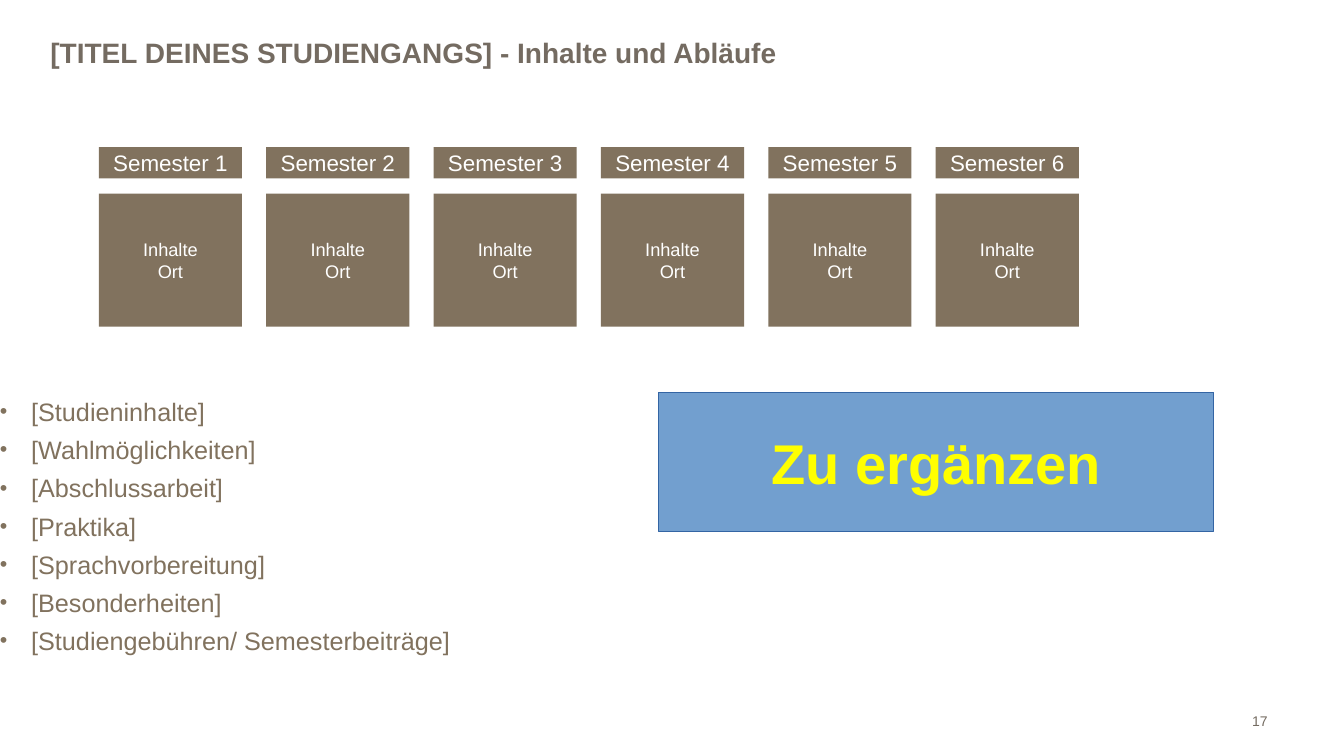
from lxml.etree import SubElement
from pptx import Presentation
from pptx.dml.color import RGBColor
from pptx.enum.shapes import MSO_SHAPE
from pptx.enum.text import MSO_ANCHOR, MSO_AUTO_SIZE, PP_ALIGN
from pptx.oxml.ns import qn
from pptx.util import Pt

PX = 9144
BROWN = RGBColor(0x81, 0x72, 0x5E)
GREY = RGBColor(0x74, 0x6B, 0x61)
WHITE = RGBColor(0xFF, 0xFF, 0xFF)
BLUE = RGBColor(0x72, 0x9F, 0xCF)
NAVY = RGBColor(0x34, 0x65, 0xA4)
YELLOW = RGBColor(0xFF, 0xFF, 0x00)


def write(frame, lines, size, color, align=PP_ALIGN.LEFT, bold=False):
    frame.word_wrap = True
    for i, line in enumerate(lines):
        para = frame.add_paragraph() if i else frame.paragraphs[0]
        para.alignment = align
        run = para.add_run()
        run.text = line
        run.font.name = "Arial"
        run.font.size = Pt(size)
        run.font.bold = bold
        run.font.color.rgb = color


def block(shapes, left, top, width, height, fill):
    rect = shapes.add_shape(
        MSO_SHAPE.RECTANGLE, left * PX, top * PX, width * PX, height * PX
    )
    rect.shadow.inherit = False
    rect.fill.solid()
    rect.fill.fore_color.rgb = fill
    rect.line.fill.background()
    rect.text_frame.vertical_anchor = MSO_ANCHOR.MIDDLE
    return rect


deck = Presentation()
deck.slide_width = 1333 * PX
deck.slide_height = 750 * PX
slide = deck.slides.add_slide(deck.slide_layouts[6])
shapes = slide.shapes

topics = shapes.add_textbox(0, 394 * PX, 1233 * PX, 267 * PX).text_frame
topics.margin_left = topics.margin_right = 0
write(topics, [
    "[Studieninhalte]",
    "[Wahlmöglichkeiten]",
    "[Abschlussarbeit]",
    "[Praktika]",
    "[Sprachvorbereitung]",
    "[Besonderheiten]",
    "[Studiengebühren/ Semesterbeiträge]",
], 18, BROWN)
for i, para in enumerate(topics.paragraphs):
    props = para._p.get_or_add_pPr()
    props.set("marL", str(31 * PX))
    props.set("indent", str(-31 * PX))
    tint = SubElement(props, qn("a:buClr"))
    SubElement(tint, qn("a:srgbClr"), val=str(BROWN))
    SubElement(props, qn("a:buSzPct"), val="85000")
    SubElement(props, qn("a:buFont"), typeface="Arial")
    SubElement(props, qn("a:buChar"), char="•")
    para.line_spacing = 0.8
    para.space_before = Pt(10 if i else 0)

for i in range(6):
    left = 98 + 166 * i
    group = shapes.add_group_shape()
    head = block(group.shapes, left, 146, 142, 31, BROWN)
    write(head.text_frame, [f"Semester {i + 1}"], 16, WHITE, PP_ALIGN.CENTER)
    body = block(group.shapes, left, 192, 142, 132, BROWN)
    write(body.text_frame, ["Inhalte", "Ort"], 13, WHITE, PP_ALIGN.CENTER)

note = block(shapes, 653, 389, 551, 138, BLUE)
note.line.color.rgb = NAVY
note.line.width = Pt(0)
write(note.text_frame, ["Zu ergänzen"], 40, YELLOW, PP_ALIGN.CENTER, True)

number = shapes.add_textbox(956 * PX, 695 * PX, 311 * PX, 40 * PX).text_frame
number.vertical_anchor = MSO_ANCHOR.MIDDLE
write(number, ["17"], 10, GREY, PP_ALIGN.RIGHT)

title = shapes.add_textbox(50 * PX, 37 * PX, 950 * PX, 37 * PX).text_frame
title.margin_left = title.margin_right = 0
title.auto_size = MSO_AUTO_SIZE.SHAPE_TO_FIT_TEXT
write(title, ["[TITEL DEINES STUDIENGANGS] - Inhalte und Abläufe"], 20, GREY, bold=True)
title.paragraphs[0].line_spacing = 0.8

deck.save("out.pptx")
